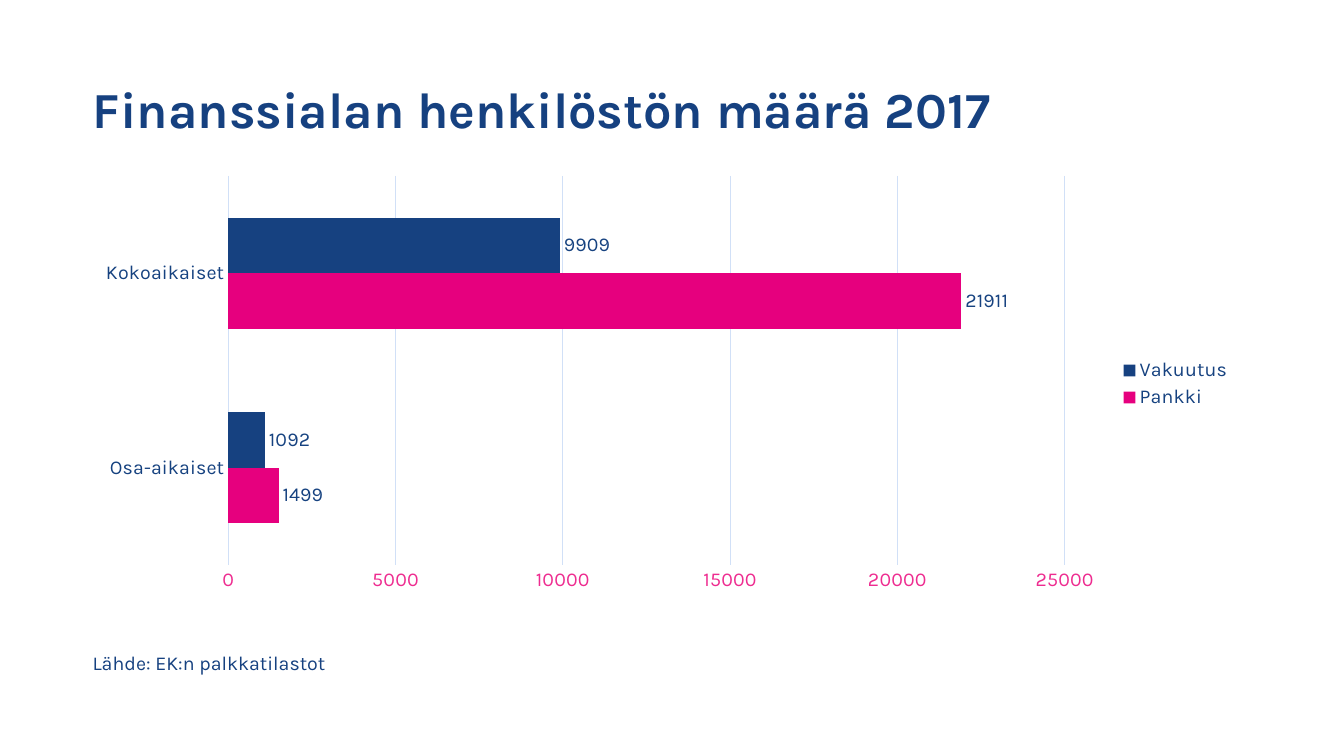
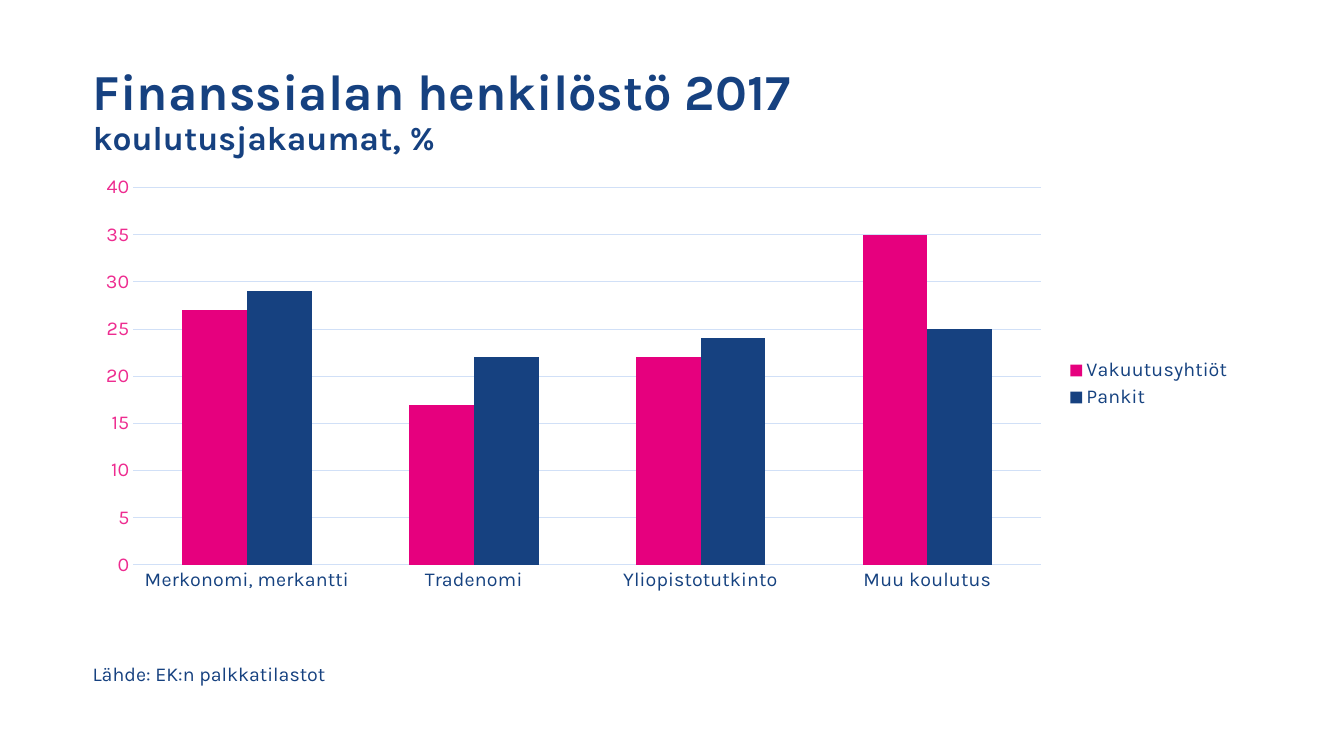
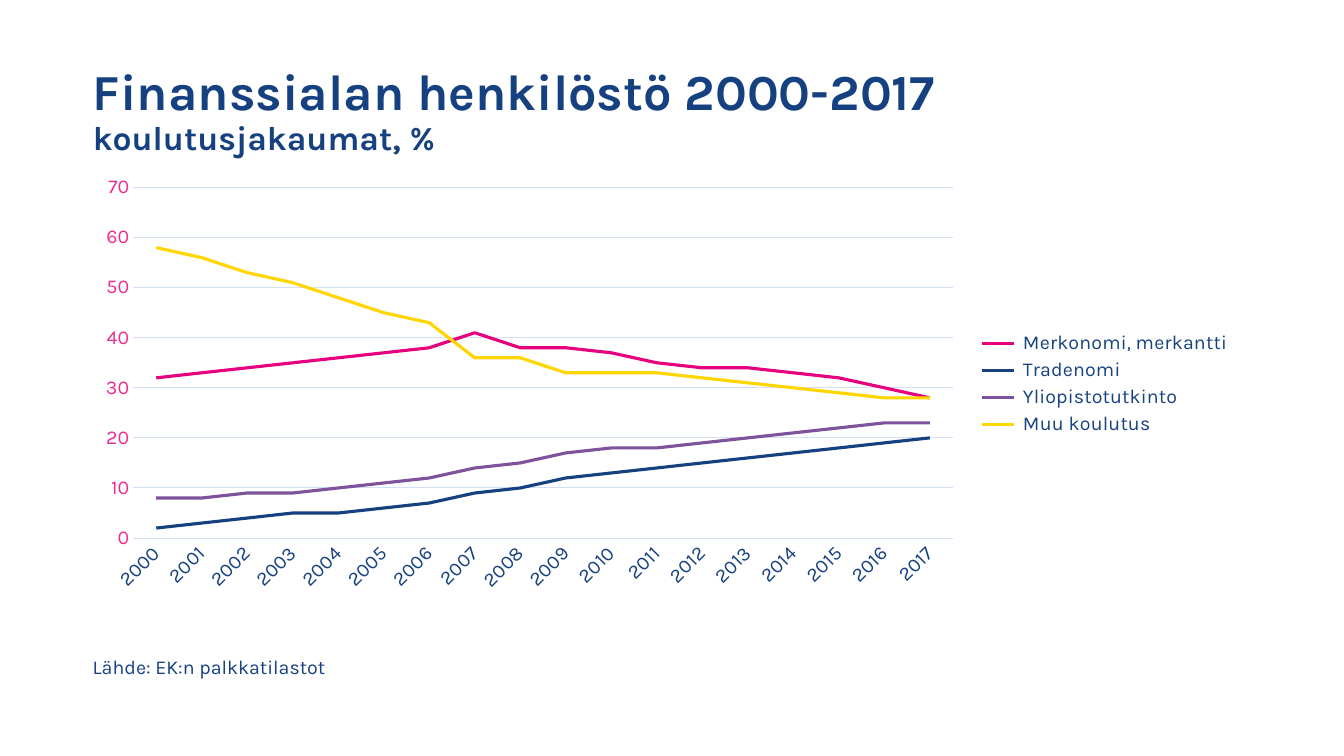
from dataclasses import dataclass

from pptx import Presentation
from pptx.chart.axis import CategoryAxis, ValueAxis
from pptx.chart.data import CategoryChartData
from pptx.dml.color import RGBColor
from pptx.enum.chart import (XL_CHART_TYPE, XL_LABEL_POSITION, XL_LEGEND_POSITION,
                             XL_TICK_MARK)
from pptx.enum.text import MSO_ANCHOR, MSO_AUTO_SIZE, PP_ALIGN
from pptx.slide import Slide
from pptx.text.text import Font, _Paragraph
from pptx.util import Inches, Pt

NAVY = RGBColor(0x16, 0x41, 0x80)
CHART_TEXT = RGBColor(0x16, 0x42, 0x80)
MAGENTA = RGBColor(0xE6, 0x00, 0x7E)
AXIS_PINK = RGBColor(0xEE, 0x2C, 0x90)
GRID_BLUE = RGBColor(0xD1, 0xE0, 0xF7)
PURPLE = RGBColor(0x7F, 0x53, 0x9C)
YELLOW = RGBColor(0xFF, 0xD6, 0x00)

FONT = "Karla"
TITLE_SIZE, SUBTITLE_SIZE, BODY_SIZE = 36, 24, 14
LEFT, CONTENT_WIDTH = Inches(0.82), Inches(11.5)
SOURCE = "Lähde: EK:n palkkatilastot"
EDUCATION = ["Merkonomi, merkantti", "Tradenomi", "Yliopistotutkinto", "Muu koulutus"]


@dataclass(frozen=True)
class Series:
    name: str
    values: list[int]
    color: RGBColor


@dataclass(frozen=True)
class ChartSlide:
    title: str
    chart_type: XL_CHART_TYPE
    categories: list[str]
    series: list[Series]
    axis_maximum: int
    axis_step: int
    source_top: float
    subtitle: str = ""
    value_labels: bool = False
    slanted_categories: bool = False


CHART_SLIDES = [
    ChartSlide(
        "Finanssialan henkilöstön määrä 2017",
        XL_CHART_TYPE.BAR_CLUSTERED,
        ["Osa-aikaiset", "Kokoaikaiset"],
        [Series("Pankki", [1499, 21911], MAGENTA),
         Series("Vakuutus", [1092, 9909], NAVY)],
        axis_maximum=25000, axis_step=5000, source_top=6.41, value_labels=True,
    ),
    ChartSlide(
        "Finanssialan henkilöstö 2017",
        XL_CHART_TYPE.COLUMN_CLUSTERED,
        EDUCATION,
        [Series("Vakuutusyhtiöt", [27, 17, 22, 35], MAGENTA),
         Series("Pankit", [29, 22, 24, 25], NAVY)],
        axis_maximum=40, axis_step=5, source_top=6.52, subtitle="koulutusjakaumat, %",
    ),
    ChartSlide(
        "Finanssialan henkilöstö 2000-2017",
        XL_CHART_TYPE.LINE,
        [str(year) for year in range(2000, 2018)],
        [Series(f" {name}", values, color) for name, values, color in zip(
            EDUCATION,
            [[32, 33, 34, 35, 36, 37, 38, 41, 38, 38, 37, 35, 34, 34, 33, 32, 30, 28],
             [2, 3, 4, 5, 5, 6, 7, 9, 10, 12, 13, 14, 15, 16, 17, 18, 19, 20],
             [8, 8, 9, 9, 10, 11, 12, 14, 15, 17, 18, 18, 19, 20, 21, 22, 23, 23],
             [58, 56, 53, 51, 48, 45, 43, 36, 36, 33, 33, 33, 32, 31, 30, 29, 28, 28]],
            [MAGENTA, NAVY, PURPLE, YELLOW])],
        axis_maximum=70, axis_step=10, source_top=6.45, subtitle="koulutusjakaumat, %",
        slanted_categories=True,
    ),
]


def format_font(font: Font, *, size: float = BODY_SIZE, color: RGBColor = CHART_TEXT,
                bold: bool = False) -> None:
    font.name = FONT
    font.size = Pt(size)
    font.bold = bold
    font.color.rgb = color


def add_text(paragraph: _Paragraph, text: str, *, size: float = BODY_SIZE,
             color: RGBColor = NAVY, bold: bool = False) -> None:
    run = paragraph.add_run()
    run.text = text
    format_font(run.font, size=size, color=color, bold=bold)


def set_master_title_size(presentation: Presentation) -> None:
    """Size inherited by line breaks, which carry no run format of their own."""
    for style in presentation.slide_master.element.xpath(
            "p:txStyles/p:titleStyle/a:lvl1pPr/a:defRPr"):
        style.set("sz", str(TITLE_SIZE * 100))


def add_title(slide: Slide, title: str, subtitle: str) -> None:
    shape = slide.shapes.title
    shape.left, shape.top = LEFT, Inches(0.39)
    shape.width, shape.height = CONTENT_WIDTH, Inches(1.45)
    frame = shape.text_frame
    frame.auto_size = MSO_AUTO_SIZE.NONE
    frame.vertical_anchor = MSO_ANCHOR.MIDDLE
    paragraph = frame.paragraphs[0]
    paragraph.alignment = PP_ALIGN.LEFT
    paragraph.line_spacing = 0.9
    add_text(paragraph, title, size=TITLE_SIZE, bold=True)
    if subtitle:
        paragraph.add_line_break()
        add_text(paragraph, subtitle, size=SUBTITLE_SIZE, bold=True)


def add_source(slide: Slide, top: float) -> None:
    frame = slide.shapes.add_textbox(LEFT, Inches(top), Inches(2.67), Inches(0.34)).text_frame
    frame.word_wrap = False
    frame.auto_size = MSO_AUTO_SIZE.SHAPE_TO_FIT_TEXT
    add_text(frame.paragraphs[0], SOURCE)


def format_axis(axis: CategoryAxis | ValueAxis, color: RGBColor) -> None:
    axis.major_tick_mark = axis.minor_tick_mark = XL_TICK_MARK.NONE
    format_font(axis.tick_labels.font, color=color)


def add_chart(slide: Slide, content: ChartSlide) -> None:
    data = CategoryChartData(number_format="0")
    data.categories = content.categories
    for series in content.series:
        data.add_series(series.name, series.values)
    chart = slide.shapes.add_chart(content.chart_type, LEFT, Inches(1.66), CONTENT_WIDTH,
                                   Inches(4.3), data).chart
    format_font(chart.font)
    chart.has_title = False
    chart.has_legend = True
    chart.legend.position = XL_LEGEND_POSITION.RIGHT
    chart.legend.include_in_layout = False
    format_font(chart.legend.font)

    category_axis, value_axis = chart.category_axis, chart.value_axis
    format_axis(category_axis, CHART_TEXT)
    format_axis(value_axis, AXIS_PINK)
    value_axis.minimum_scale = 0
    value_axis.maximum_scale = content.axis_maximum
    value_axis.major_unit = content.axis_step
    value_axis.has_major_gridlines = True
    value_axis.format.line.fill.background()
    for line in (category_axis.format.line, value_axis.major_gridlines.format.line):
        line.color.rgb = GRID_BLUE
        line.width = Pt(0.75)
    if content.slanted_categories:
        for body in category_axis._element.xpath("c:txPr/a:bodyPr"):
            body.set("rot", str(-45 * 60000))

    plot = chart.plots[0]
    plot.vary_by_categories = False
    is_line = content.chart_type == XL_CHART_TYPE.LINE
    if not is_line:
        plot.gap_width = 150
        plot.overlap = 0
    for drawn, series in zip(plot.series, content.series):
        if is_line:
            drawn.smooth = False
            drawn.format.line.color.rgb = series.color
            drawn.format.line.width = Pt(2.25)
        else:
            drawn.format.fill.solid()
            drawn.format.fill.fore_color.rgb = series.color
    if content.value_labels:
        plot.has_data_labels = True
        labels = plot.data_labels
        labels.show_value = True
        labels.position = XL_LABEL_POSITION.OUTSIDE_END
        format_font(labels.font)


def main() -> None:
    presentation = Presentation()
    presentation.slide_width, presentation.slide_height = Inches(13.33), Inches(7.5)
    set_master_title_size(presentation)
    title_only = presentation.slide_layouts.get_by_name("Title Only")
    for content in CHART_SLIDES:
        slide = presentation.slides.add_slide(title_only)
        add_title(slide, content.title, content.subtitle)
        add_chart(slide, content)
        add_source(slide, content.source_top)
    presentation.save("out.pptx")


if __name__ == "__main__":
    main()
